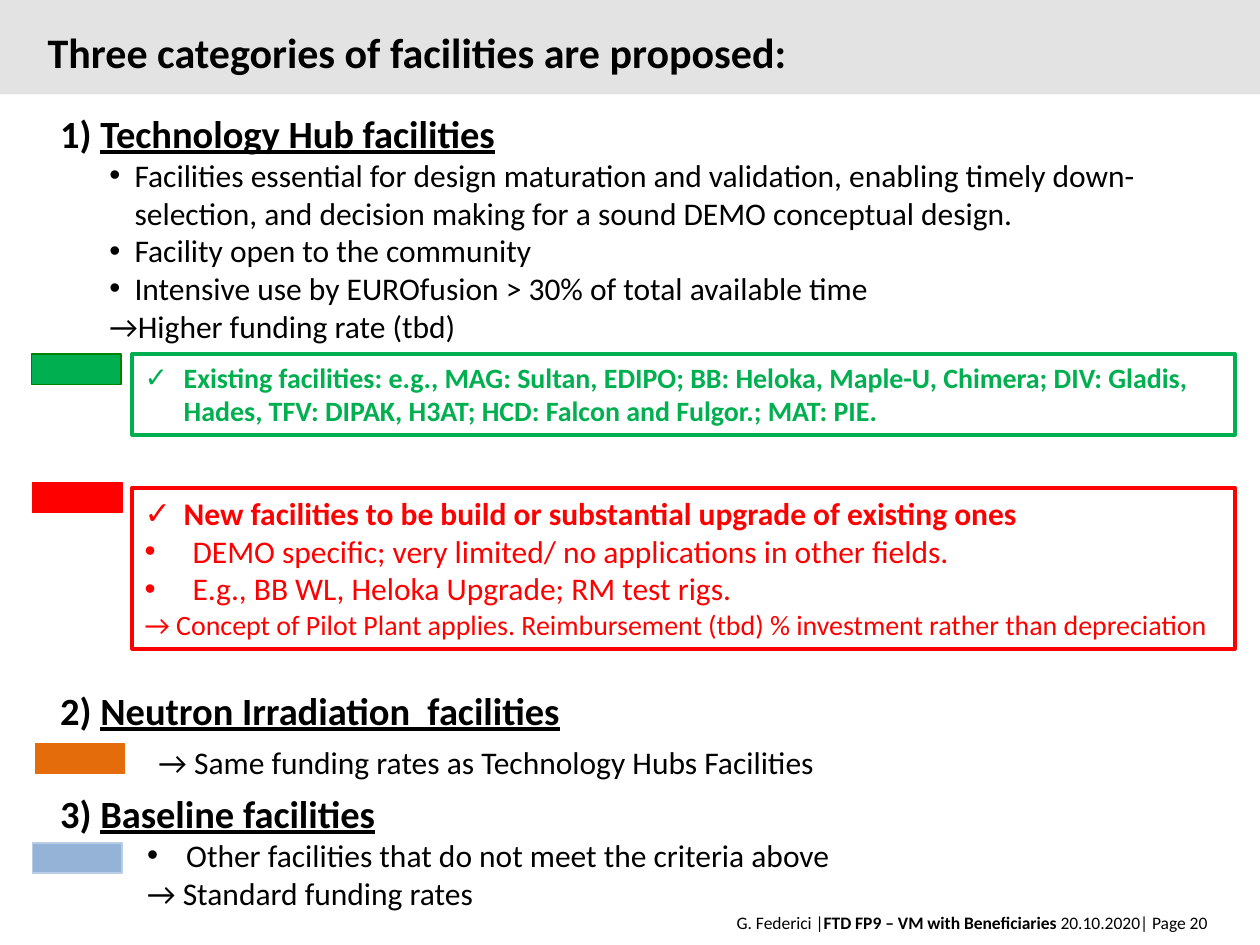
from lxml import etree
from pptx import Presentation
from pptx import util as u
from pptx.dml.color import RGBColor
from pptx.enum import shapes, text
from pptx.oxml.ns import qn

BLACK = RGBColor(0, 0, 0)
GREY = RGBColor(0xE3, 0xE3, 0xE3)
RED = RGBColor(0xFF, 0, 0)
GREEN = RGBColor(0, 0xB0, 0x50)
DARK = RGBColor(0, 0x80, 0)
BLUE = RGBColor(0x95, 0xB3, 0xD7)
PALE = RGBColor(0xB9, 0xCD, 0xE5)
ORANGE = RGBColor(0xE4, 0x6C, 0x0A)

WIDE, HIGH = 10, 7.5
EDGE = 0.38            # left of the section texts
BOX = 1.05             # left of the framed boxes
TAG = (0.71, 0.24)     # size of a colour tag


def line(words, size=18, bold=False, mark=None, left=0, hang=0, before=0):
    runs = words if isinstance(words, list) else [(words, bold, False)]
    return dict(runs=runs, size=size, mark=mark, left=left, hang=hang,
                before=before)


def head(num, name):
    return line([(num, True, False), (name, True, True)], size=22)


# left, top, width, height, lines
SECTIONS = [
    (EDGE, 0.82, 9.53, 1.99, [
        head("1) ", "Technology Hub facilities"),
        *[line(t, mark="•", left=0.59, hang=0.2) for t in (
            "Facilities essential for design maturation and validation, "
            "enabling timely down-selection, and decision making for a "
            "sound DEMO conceptual design.",
            "Facility open to the community",
            "Intensive use by EUROfusion > 30% of total available time")],
        line("→Higher funding rate (tbd)", left=0.39)]),
    (EDGE, 5.4, 6.7, 0.86, [
        head("2) ", "Neutron Irradiation  facilities"),
        line("→ Same funding rates as Technology Hubs Facilities",
             left=0.78, before=6)]),
    (EDGE, 6.22, 6.7, 1.08, [
        head("3) ", "Baseline facilities"),
        line("Other facilities that do not meet the criteria above",
             mark="•", left=1, hang=0.31),
        line("→ Standard funding rates", left=0.69)]),
]

# top, height, colour, lines
FRAMES = [
    (2.81, 0.64, GREEN, [
        line("Existing facilities: e.g., MAG: Sultan, EDIPO; BB: Heloka, "
             "Maple-U, Chimera; DIV: Gladis, Hades, TFV: DIPAK, H3AT; "
             "HCD: Falcon and Fulgor.; MAT: PIE.",
             size=16, bold=True, mark="✓", left=0.31, hang=0.31)]),
    (3.87, 1.28, RED, [
        line("New facilities to be build or substantial upgrade of "
             "existing ones", bold=True, mark="✓", left=0.31, hang=0.31),
        *[line(t, mark="•", left=0.38, hang=0.38) for t in (
            "DEMO specific; very limited/ no applications in other fields.",
            "E.g., BB WL, Heloka Upgrade; RM test rigs.")],
        line("→ Concept of Pilot Plant applies. Reimbursement (tbd) % "
             "investment rather than depreciation", size=16)]),
]

# left, top, fill, outline
TAGS = [
    (0.25, 2.81, GREEN, DARK),
    (0.26, 3.83, RED, RED),
    (0.28, 5.9, ORANGE, ORANGE),
    (0.26, 6.69, BLUE, PALE),
]

TITLE = line("Three categories of facilities are proposed:", 24, True)
FOOTER = line([("G. Federici |", False, False),
               ("FTD FP9 – VM with Beneficiaries", True, False),
               (" 20.10.2020| Page 20", False, False)], size=10)

deck = Presentation()
deck.slide_width, deck.slide_height = u.Inches(WIDE), u.Inches(HIGH)
slide = deck.slides.add_slide(deck.slide_layouts[6])


def rect(place, fill=None, edge=None, width=0.75):
    shape = slide.shapes.add_shape(shapes.MSO_SHAPE.RECTANGLE,
                                   *map(u.Inches, place))
    shape.shadow.inherit = False
    for part, tint in ((shape.fill, fill), (shape.line.fill, edge)):
        if tint is None:
            part.background()
        else:
            part.solid()
            part.fore_color.rgb = tint
    if edge is not None:
        shape.line.width = u.Pt(width)
    return shape


def indent(para, row):
    props = para._p.get_or_add_pPr()
    props.set("marL", str(u.Inches(row["left"])))
    props.set("indent", str(-u.Inches(row["hang"])))
    if row["mark"]:
        face = "Arial" if row["mark"] == "•" else "Segoe UI Symbol"
        etree.SubElement(props, qn("a:buFont")).set("typeface", face)
        etree.SubElement(props, qn("a:buChar")).set("char", row["mark"])
    else:
        etree.SubElement(props, qn("a:buNone"))


def write(shape, rows, tint=BLACK, anchor=text.MSO_ANCHOR.TOP,
          align=text.PP_ALIGN.LEFT):
    frame = shape.text_frame
    frame.word_wrap = True
    frame.vertical_anchor = anchor
    for i, row in enumerate(rows):
        para = frame.add_paragraph() if i else frame.paragraphs[0]
        indent(para, row)
        para.alignment = align
        if row["before"]:
            para.space_before = u.Pt(row["before"])
        for words, bold, under in row["runs"]:
            run = para.add_run()
            run.text = words
            font = run.font
            font.name, font.size = "Calibri", u.Pt(row["size"])
            font.bold, font.underline = bold, under
            font.color.rgb = tint
    return frame


def label(place, rows, **look):
    return write(slide.shapes.add_textbox(*map(u.Inches, place)), rows, **look)


rect((0, 0, WIDE, HIGH / 10), GREY)
middle = text.MSO_ANCHOR.MIDDLE
label((0.67, 7.2, 9.01, 0.25), [FOOTER], anchor=middle,
      align=text.PP_ALIGN.RIGHT)
title = label((0.28, 0.14, 8.25, 0.5), [TITLE], anchor=middle)
title.paragraphs[0].line_spacing = u.Pt(32)

for left, top, fill, edge in TAGS:
    rect((left, top, *TAG), fill, edge)
for *place, rows in SECTIONS:
    label(place, rows)
for top, tall, tint, rows in FRAMES:
    write(rect((BOX, top, 8.75, tall), edge=tint, width=2.25), rows, tint)

deck.save("out.pptx")
